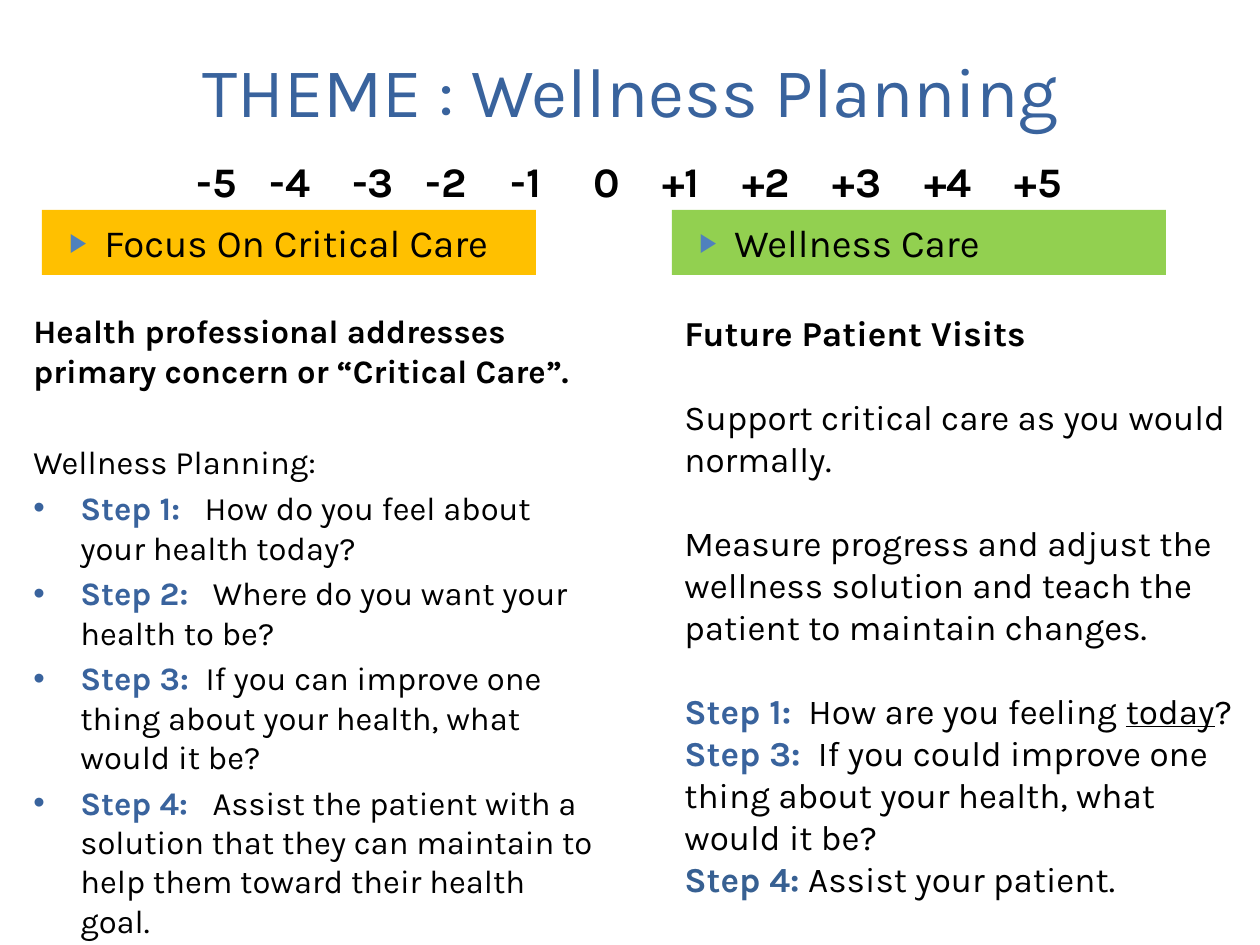
from pptx import Presentation
from pptx.dml.color import RGBColor as RGB
from pptx.enum.shapes import MSO_SHAPE as Kind
from pptx.enum.text import MSO_ANCHOR as Anchor, PP_ALIGN as Align
from pptx.oxml.ns import qn
from pptx.util import Pt
from lxml.etree import SubElement as sub

# Content
FONT = "Karla"
HUE = {"ink": "000000", "blue": "39639D", "navy": "376092", "mark": "4F81BD",
       "gold": "FFC000", "lime": "92D050"}
TITLE = "THEME : Wellness Planning"
MARKS = [("-5", 217), ("-4", 290), ("-3", 373), ("-2", 446), ("-1", 526),
         ("0", 607), ("+1", 681), ("+2", 766), ("+3", 857), ("+4", 948),
         ("+5", 1038)]  # label, centre in px
BARS = [("Focus On Critical Care", 42, "gold"), ("Wellness Care", 672, "lime")]


def step(num, gap, *rest, hue="blue"):
    """Bold label, a space widened by gap points, then the question."""
    return [(f"Step {num}:", {"hue": hue, "bold": True}), (" ", {"gap": gap}),
            *[t if isinstance(t, tuple) else (t, {}) for t in rest]]


# Each paragraph: space before in points, bulleted, runs
LEFT = [
    (0, False, [("Health professional addresses primary concern or “Critical Care”.",
                 {"bold": True})]),
    (30, False, [("Wellness Planning:", {})]),
    (3.7, True, step(1, 9.5, "How do you feel about your health today?")),
    (3.7, True, step(2, 9.5, "Where do you want your health to be?")),
    (3.7, True, step(3, 5, "If you can improve one thing about your health, "
                           "what would it be?")),
    (3.7, True, step(4, 9.5, "Assist the patient with a solution that they can "
                             "maintain to help them toward their health goal.")),
]
RIGHT = [
    (0, False, [("Future Patient Visits", {"bold": True})]),
    (24, False, [("Support critical care as you would normally.", {})]),
    (24, False, [("Measure progress and adjust the wellness solution and teach "
                  "the patient to maintain changes.", {})]),
    (24, False, step(1, 5, "How are you feeling ", ("today", {"line": True}), "?")),
    (0, False, step(3, 5, "If you could improve one thing about your health, "
                          "what would it be?")),
    (0, False, step(4, 0, "Assist your patient.", hue="navy")),
]
COLS = [(LEFT, (21, 305, 588, 539), 18.7), (RIGHT, (672, 305, 588, 606), 20)]


# Helpers
def px(n):
    return round(n * 914400 / 126)


def put(para, text, size, hue="ink", bold=False, line=False, gap=0):
    run = para.add_run()
    run.text = text
    font = run.font
    font.name, font.size, font.bold = FONT, Pt(size), bold
    font.underline = line
    font.color.rgb = RGB.from_string(HUE[hue])
    if gap:
        font._element.set("spc", str(int(gap * 100)))


def dot(para, char, left, hang, hue=None, pct=None):
    props = para._p.get_or_add_pPr()
    props.set("marL", str(px(left)))
    props.set("indent", str(-px(hang)))
    if hue:
        sub(sub(props, qn("a:buClr")), qn("a:srgbClr"), val=HUE[hue])
    if pct:
        sub(props, qn("a:buSzPct"), val=str(pct * 1000))
    sub(props, qn("a:buFont"), typeface="Arial")
    sub(props, qn("a:buChar"), char=char)


def box(*rect):
    frame = slide.shapes.add_textbox(*map(px, rect)).text_frame
    frame.word_wrap = True
    return frame


deck = Presentation()
deck.slide_width, deck.slide_height = px(1260), px(945)
slide = deck.slides.add_slide(deck.slide_layouts[5])

# Title
head = slide.shapes.title
head.left, head.top, head.width, head.height = map(px, (53, 32, 1155, 116))
head.text_frame.vertical_anchor = Anchor.MIDDLE
para = head.text_frame.paragraphs[0]
para.alignment = Align.CENTER
put(para, TITLE, 40, "blue")

# Scale, each label centred on its own tab stop
frame = box(0, 149, 1260, 60)
frame.margin_left = frame.margin_right = 0
para = frame.paragraphs[0]
stops = sub(para._p.get_or_add_pPr(), qn("a:tabLst"))
for text, mid in MARKS:
    sub(stops, qn("a:tab"), pos=str(px(mid)), algn="ctr")
    put(para, "\t" + text, 24, bold=True)

# Coloured bars
for text, left, hue in BARS:
    bar = slide.shapes.add_shape(Kind.RECTANGLE, *map(px, (left, 210, 494, 65)))
    bar.shadow.inherit = False
    bar.fill.solid()
    bar.fill.fore_color.rgb = RGB.from_string(HUE[hue])
    bar.line.fill.background()
    para = bar.text_frame.paragraphs[0]
    para.alignment = Align.LEFT
    dot(para, "▶", 50, 35, "mark", 68)
    put(para, text, 22)

# Two columns of text
for rows, rect, size in COLS:
    frame = box(*rect)
    for i, (space, listed, runs) in enumerate(rows):
        para = frame.add_paragraph() if i else frame.paragraphs[0]
        para.space_before = Pt(space)
        if listed:
            dot(para, "•", 47, 47)
        for text, look in runs:
            put(para, text, size, **look)

deck.save("out.pptx")
